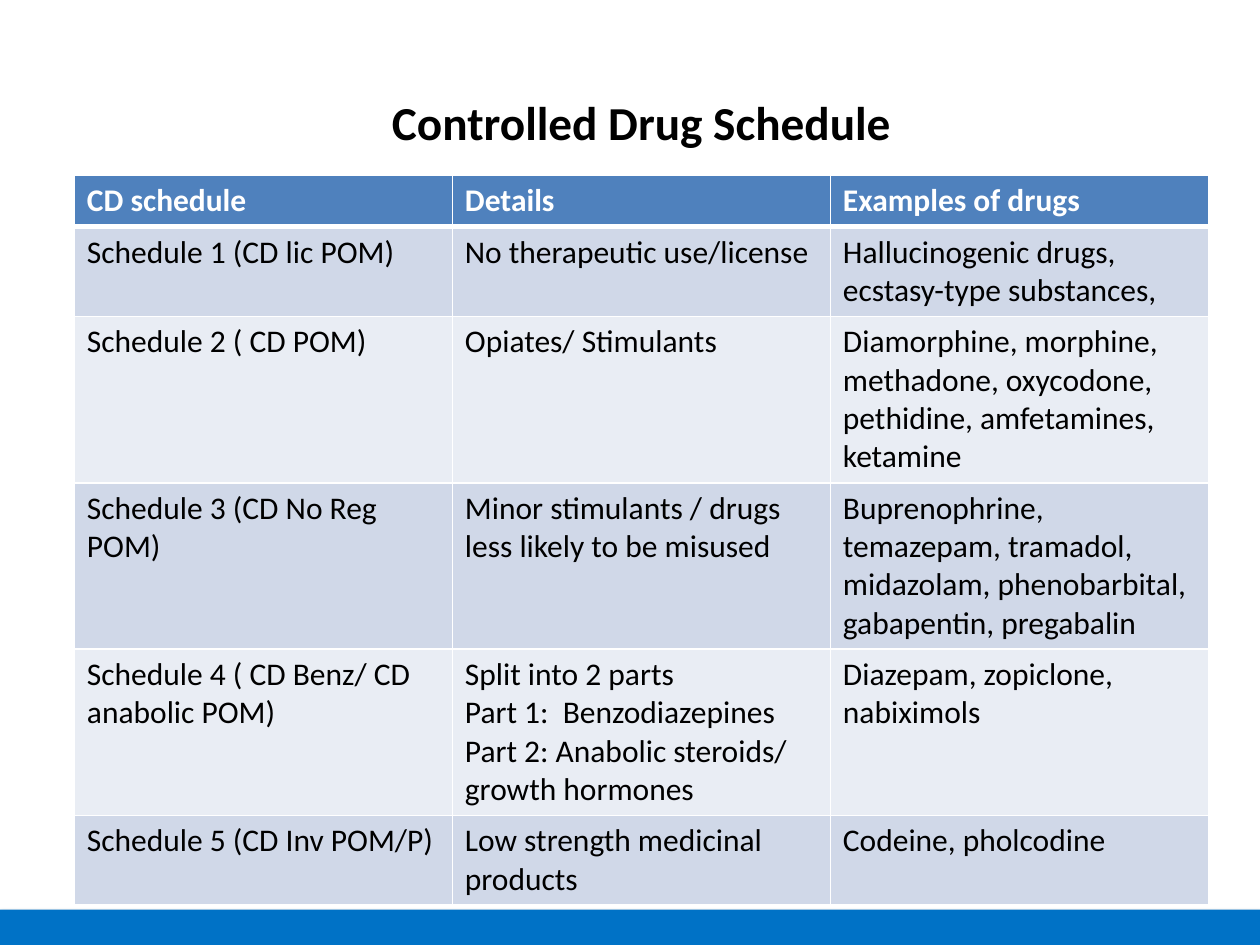
from dataclasses import dataclass

from lxml import etree
from pptx import Presentation
from pptx.dml.color import RGBColor
from pptx.enum.shapes import MSO_SHAPE
from pptx.enum.text import MSO_ANCHOR, PP_ALIGN
from pptx.oxml.ns import qn
from pptx.util import Inches, Pt

RECT = MSO_SHAPE.RECTANGLE
MIDDLE = MSO_ANCHOR.MIDDLE
CENTER = PP_ALIGN.CENTER


@dataclass(frozen=True)
class Theme:
    font: str = "Calibri"
    title: int = 27
    body: int = 18
    ink: str = "000000"
    paper: str = "FFFFFF"
    bar: str = "0072C6"
    head: str = "4F81BD"
    bands: tuple = ("D0D8E8", "E9EDF4")
    thin: int = 1
    thick: int = 3


HEADS = ["CD schedule", "Details", "Examples of drugs"]
DRUGS = [
    ["Schedule 1 (CD lic POM)", "No therapeutic use/license",
     "Hallucinogenic drugs, ecstasy-type substances,"],
    ["Schedule 2 ( CD POM)", "Opiates/ Stimulants",
     "Diamorphine, morphine, methadone, oxycodone, pethidine, amfetamines, ketamine"],
    ["Schedule 3 (CD No Reg POM)", "Minor stimulants / drugs less likely to be misused",
     "Buprenophrine, temazepam, tramadol, midazolam, phenobarbital, gabapentin, pregabalin"],
    ["Schedule 4 ( CD Benz/ CD anabolic POM)",
     "Split into 2 parts\nPart 1:  Benzodiazepines\nPart 2: Anabolic steroids/ growth hormones",
     "Diazepam, zopiclone, nabiximols"],
    ["Schedule 5 (CD Inv POM/P)", "Low strength medicinal products", "Codeine, pholcodine"],
]


class Deck:
    def __init__(self, theme):
        self.theme = theme
        self.file = Presentation()
        self.file.slide_width = Inches(10)
        self.file.slide_height = Inches(7.5)
        self.slide = self.file.slides.add_slide(self.file.slide_layouts[5])

    def style(self, frame, size, color, bold):
        for para in frame.paragraphs:
            for run in para.runs:
                run.font.name = self.theme.font
                run.font.size = Pt(size)
                run.font.bold = bold
                run.font.color.rgb = RGBColor.from_string(color)

    def title(self, text, left, top, width, height):
        box = self.slide.shapes.title
        box.left, box.top = Inches(left), Inches(top)
        box.width, box.height = Inches(width), Inches(height)
        frame = box.text_frame
        frame.text = text
        frame.vertical_anchor = MIDDLE
        frame.paragraphs[0].alignment = CENTER
        self.style(frame, self.theme.title, self.theme.ink, True)

    def bar(self, left, top, width, height):
        box = self.slide.shapes.add_shape(
            RECT, Inches(left), Inches(top), Inches(width), Inches(height))
        box.fill.solid()
        box.fill.fore_color.rgb = RGBColor.from_string(self.theme.bar)
        box.line.fill.background()
        box.shadow.inherit = False
        glow = box.element.spPr.find(qn("a:effectLst"))
        shade = etree.SubElement(
            glow, qn("a:outerShdw"), blurRad=str(Pt(3.1)), dist=str(Pt(1.8)),
            dir="5400000", rotWithShape="0")
        color = etree.SubElement(shade, qn("a:srgbClr"), val=self.theme.ink)
        etree.SubElement(color, qn("a:alpha"), val="35000")

    def edge(self, cell, top, bottom):
        widths = {"lnL": self.theme.thin, "lnR": self.theme.thin, "lnT": top, "lnB": bottom}
        props = cell._tc.get_or_add_tcPr()
        for spot, (side, width) in enumerate(widths.items()):
            line = etree.Element(qn(f"a:{side}"), w=str(Pt(width)))
            fill = etree.SubElement(line, qn("a:solidFill"))
            etree.SubElement(fill, qn("a:srgbClr"), val=self.theme.paper)
            props.insert(spot, line)

    def table(self, rows, left, top, width, height, step):
        theme = self.theme
        frame = self.slide.shapes.add_table(
            len(rows), len(rows[0]), Inches(left), Inches(top), Inches(width), Inches(height))
        grid = frame.table
        for r, texts in enumerate(rows):
            grid.rows[r].height = Inches(step)
            first = r == 0
            shade = theme.head if first else theme.bands[(r - 1) % 2]
            for c, text in enumerate(texts):
                cell = grid.cell(r, c)
                cell.text_frame.text = text
                self.style(cell.text_frame, theme.body, theme.paper if first else theme.ink, first)
                cell.fill.solid()
                cell.fill.fore_color.rgb = RGBColor.from_string(shade)
                self.edge(cell, theme.thick if r == 1 else theme.thin,
                          theme.thick if first else theme.thin)
        frame.height = Inches(height)

    def save(self):
        self.file.save("out.pptx")


def main():
    deck = Deck(Theme())
    deck.bar(0, 7.22, 10, 0.28)
    deck.table([HEADS] + DRUGS, 0.59, 1.39, 9, 5.71, 0.41)
    deck.title("Controlled Drug Schedule", 0.59, 0.68, 9, 0.57)
    deck.save()


if __name__ == "__main__":
    main()
